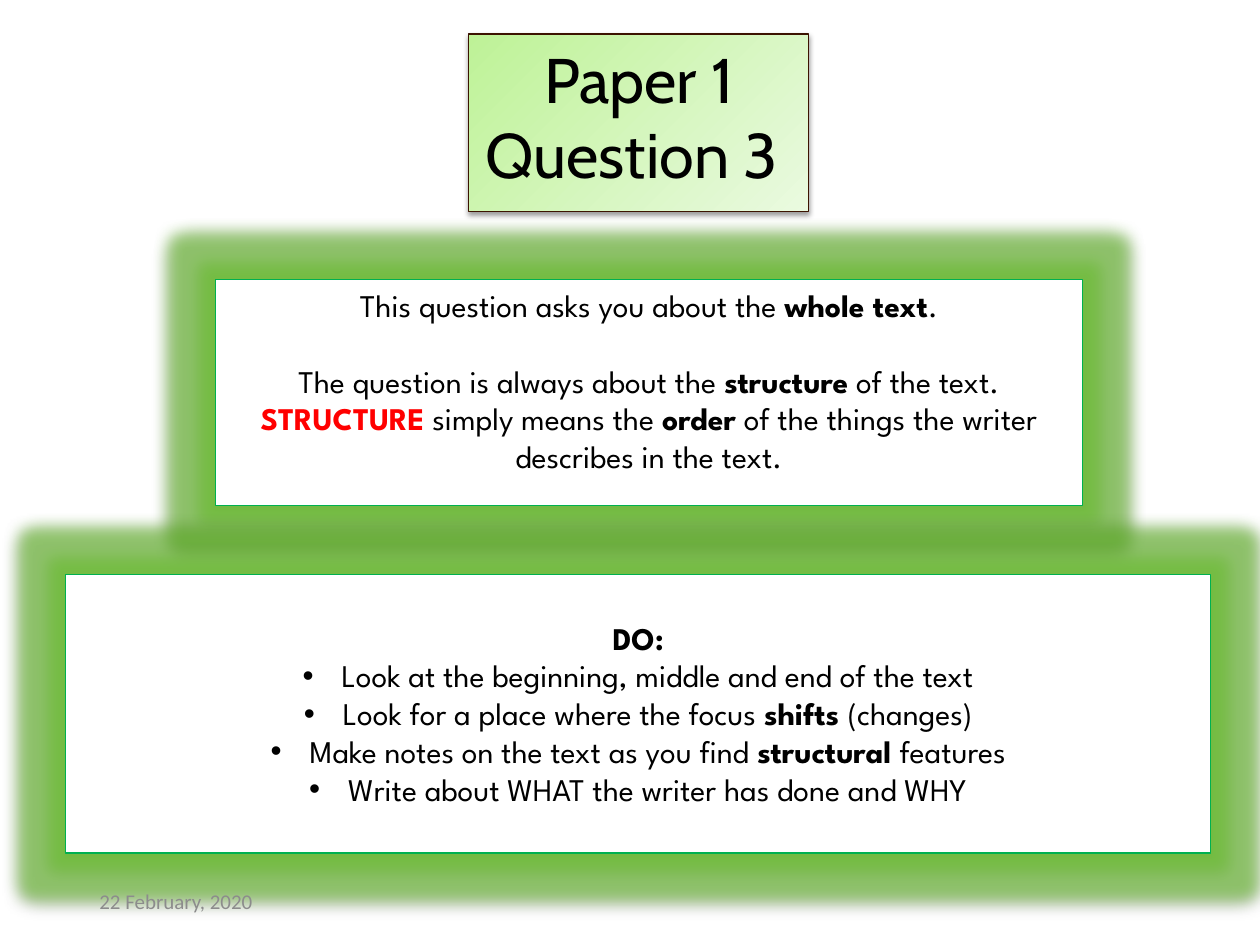
import pptx
import pptx.util
import pptx.oxml
import pptx.oxml.ns
import pptx.dml.color
import pptx.enum.shapes
import pptx.enum.text

Pt, Inches = pptx.util.Pt, pptx.util.Inches
RGB = pptx.dml.color.RGBColor.from_string
ALIGN = pptx.enum.text.PP_ALIGN

theme = {
    "ink": "000000", "key": "FF0000", "date": "8C8C8C", "paper": "FFFFFF",
    "edge": "00B050", "glow": "6BC030", "rim": "3C1301",
    "fade": ("BEF297", "EAFAE0"),
    "head": ("Cabin", 36), "body": ("League Spartan", 18), "foot": ("Calibri", 12),
}
LINE = 0.3      # height of one body line, inches
INDENT = 0.31   # bullet indent, inches

deck = pptx.Presentation()
deck.slide_width, deck.slide_height = Inches(10), Inches(7.5)
slide = deck.slides.add_slide(deck.slide_layouts[6])


def write(frame, rows, style, ink, align):
    """Fill a frame; each row is (list of (text, bold, colour), bullet, space before)."""
    frame.word_wrap = True
    for i, (runs, dot, gap) in enumerate(rows):
        para = frame.paragraphs[0] if i == 0 else frame.add_paragraph()
        if dot:
            props = para._p.get_or_add_pPr()
            props.set("marL", str(Inches(INDENT)))
            props.set("indent", str(-Inches(INDENT)))
            mark = '<a:buChar %s char="•"/>' % pptx.oxml.ns.nsdecls("a")
            font = '<a:buFont %s typeface="Arial"/>' % pptx.oxml.ns.nsdecls("a")
            for part in (font, mark):
                props.append(pptx.oxml.parse_xml(part))
        para.alignment = align
        para.font.name, para.font.size = style[0], Pt(style[1])
        para.font.color.rgb = RGB(ink)
        if gap:
            para.space_before = Inches(gap)
        for text, bold, tint in runs:
            run = para.add_run()
            run.text = text
            if bold:
                run.font.bold = True
            if tint:
                run.font.color.rgb = RGB(tint)


def plain(text):
    return text, False, None


def strong(text, tint=None):
    return text, True, tint


# Wording of the three boxes
title = [([plain("Paper 1")], False, 0), ([plain("Question 3 ")], False, 0)]
about = [
    ([plain("This question asks you about the "), strong("whole text"), plain(".")], False, 0),
    ([plain("The question is always about the "), strong("structure"),
      plain(" of the text. "), strong("STRUCTURE", theme["key"]),
      plain(" simply means the "), strong("order"),
      plain(" of the things the writer describes in the text.")], False, LINE),
]
tasks = [
    ([strong("DO:")], False, 0),
    ([plain("Look at the beginning, middle and end of the text")], True, 0),
    ([plain("Look for a place where the focus "), strong("shifts "),
      plain("(changes)")], True, 0),
    ([plain("Make notes on the text as you find "), strong("structural "),
      plain("features")], True, 0),
    ([plain("Write about WHAT the writer has done and WHY")], True, 0),
]

# Boxes: place in inches, wording, type, line colour, glow, top inset
boxes = [
    ((3.72, 0.27, 2.7, 1.41), title, "head", "rim", False, 0.05),
    ((1.71, 2.22, 6.88, 1.79), about, "body", "edge", True, 0.05),
    ((0.52, 4.56, 9.09, 2.21), tasks, "body", "edge", True, 0.05 + LINE),
]
for place, rows, style, edge, glow, inset in boxes:
    box = slide.shapes.add_shape(pptx.enum.shapes.MSO_SHAPE.RECTANGLE, *map(Inches, place))
    if glow:
        box.fill.solid()
        box.fill.fore_color.rgb = RGB(theme["paper"])
    else:
        box.fill.gradient()
        box.fill.gradient_angle = 315
        for stop, tint in zip(box.fill.gradient_stops, theme["fade"]):
            stop.color.rgb = RGB(tint)
    box.line.color.rgb = RGB(theme[edge])
    box.line.width = Pt(0.75)

    # Soft shadow below, with a green halo on the white boxes
    halo = ('<a:glow rad="%d"><a:srgbClr val="%s"><a:alpha val="60000"/></a:srgbClr></a:glow>'
            % (Pt(18), theme["glow"])) if glow else ""
    shade = ('<a:outerShdw blurRad="%d" dist="%d" dir="5400000" rotWithShape="0">'
             '<a:srgbClr val="%s"><a:alpha val="38000"/></a:srgbClr></a:outerShdw>'
             % (Pt(3.1), Pt(1.6), theme["ink"]))
    box.shadow.inherit = False
    old = box._element.spPr.find(pptx.oxml.ns.qn("a:effectLst"))
    old.getparent().replace(old, pptx.oxml.parse_xml(
        "<a:effectLst %s>%s%s</a:effectLst>" % (pptx.oxml.ns.nsdecls("a"), halo, shade)))

    frame = box.text_frame
    frame.vertical_anchor = pptx.enum.text.MSO_ANCHOR.TOP
    frame.margin_top = Inches(inset)
    write(frame, rows, theme[style], theme["ink"], ALIGN.CENTER)

# Date in the footer
date = slide.shapes.add_textbox(*map(Inches, (0.69, 6.95, 2.25, 0.4))).text_frame
date.vertical_anchor = pptx.enum.text.MSO_ANCHOR.MIDDLE
write(date, [([plain("22 February, 2020")], False, 0)],
      theme["foot"], theme["date"], ALIGN.LEFT)

deck.save("out.pptx")
